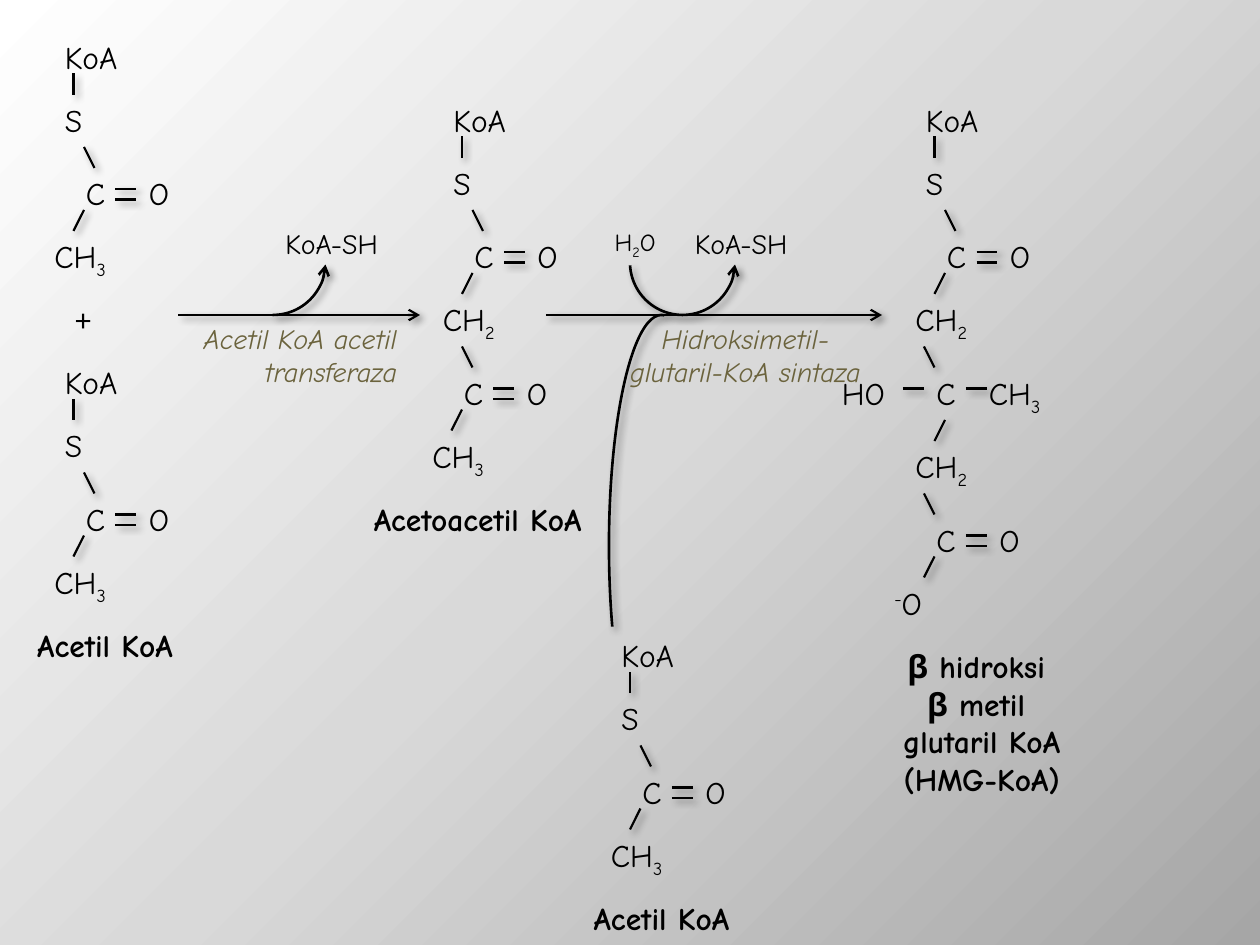
from pptx import Presentation
from pptx.dml.color import RGBColor
from pptx.enum.shapes import MSO_CONNECTOR as Connector, MSO_SHAPE as Shape
from pptx.enum.text import PP_ALIGN as Align
from pptx.oxml import parse_xml
from pptx.oxml.ns import nsdecls, qn
from pptx.util import Cm, Pt

BLACK = RGBColor(0x00, 0x00, 0x00)
OLIVE = RGBColor(0x6B, 0x63, 0x3D)
WHITE = RGBColor(0xFF, 0xFF, 0xFF)
SILVER = RGBColor(0xD9, 0xD9, 0xD9)
GRAY = RGBColor(0xA6, 0xA6, 0xA6)
BASELINES = {"_": "-25000", "^": "30000"}


def grid(steps):
    """Length of a number of grid steps, twelve to the inch."""
    return Cm(steps * 2.54 / 12)


def write(frame, text, font="Comic Neue", size=18, color=BLACK, bold=False,
          italic=False, align=Align.LEFT):
    """Fill a frame; "|" parts spans, "_" lowers a span and "^" raises it."""
    for index, line in enumerate(text.split("\n")):
        para = frame.add_paragraph() if index else frame.paragraphs[0]
        para.alignment = align
        for piece in line.split("|"):
            span = para.add_run()
            span.text = piece.lstrip("_^")
            span.font.name = font
            span.font.size = Pt(size)
            span.font.bold = bold
            span.font.italic = italic
            span.font.color.rgb = color
            if piece[0] in BASELINES:
                span.font._element.set("baseline", BASELINES[piece[0]])


class ReactionSlide:
    def __init__(self, page):
        self.page = page
        self.canvas = page.shapes

    def background(self, stops, angle):
        self.page.background.fill.solid()
        holder = self.page.element.find(".//" + qn("p:bgPr"))
        marks = "".join(
            f'<a:gs pos="{place * 1000}"><a:srgbClr val="{color}"/></a:gs>'
            for place, color in stops)
        holder.replace(holder[0], parse_xml(
            f'<a:gradFill {nsdecls("a")} rotWithShape="1"><a:gsLst>{marks}</a:gsLst>'
            f'<a:lin ang="{angle * 60000}" scaled="0"/></a:gradFill>'))

    def text(self, text, left, top, width=8, height=4.8, **style):
        box = self.canvas.add_textbox(*map(grid, (left, top, width, height)))
        box.text_frame.word_wrap = True
        write(box.text_frame, text, **style)

    def stroke(self, shape, width, arrow):
        """Black line with a soft shadow and, if named, an arrowhead."""
        shape.line.color.rgb = BLACK
        shape.line.width = Pt(width)
        if arrow:
            shape.line._get_or_add_ln().append(
                parse_xml(f'<a:{arrow} {nsdecls("a")} type="arrow"/>'))
        shape._element.spPr.append(parse_xml(
            f'<a:effectLst {nsdecls("a")}><a:outerShdw blurRad="{Pt(4)}" '
            f'dist="{Pt(3)}" dir="2700000" algn="tl" rotWithShape="0">'
            '<a:srgbClr val="000000"><a:alpha val="40000"/></a:srgbClr>'
            '</a:outerShdw></a:effectLst>'))

    def line(self, x1, y1, x2, y2, arrow=None):
        link = self.canvas.add_connector(
            Connector.STRAIGHT, *map(grid, (x1, y1, x2, y2)))
        self.stroke(link, 1.25, arrow)

    def arc(self, left, top, width, height, start, end, arrow=None):
        curve = self.canvas.add_shape(
            Shape.ARC, *map(grid, (left, top, width, height)))
        curve.adjustments[0], curve.adjustments[1] = start, end
        curve.fill.background()
        self.stroke(curve, 1.5, arrow)

    def carbonyl(self, x, y, bond=2):
        """C=O with a bond to the atom above and one to the atom below."""
        self.text("C", x, y, 4.2)
        self.text("O", x + 6, y, 4.8)
        for row in (2, 3):
            self.line(x + 4, y + row, x + 6, y + row)
        self.line(x + bond, y, x + bond - 1, y - 2)
        self.line(x, y + 6, x + 1, y + 4)

    def thioester(self, x, y, tail):
        """KoA-S-C=O chain in a new group, closed by the tail atom."""
        self.canvas = self.page.shapes.add_group_shape().shapes
        self.text("KoA", x, y)
        self.line(x + 2, y + 6, x + 2, y + 4)
        self.text("S", x, y + 6, 4.6)
        self.carbonyl(x + 2, y + 13)
        self.text(tail, x - 1, y + 19)

    def end_molecule(self):
        self.canvas = self.page.shapes


def draw_molecules(slide):
    for x, y in ((5, 3), (5, 34), (58, 60)):
        slide.thioester(x, y, "CH|_3")

    slide.thioester(42, 9, "CH|_2")
    slide.carbonyl(43, 35)
    slide.text("CH|_3", 40, 41)

    slide.thioester(87, 9, "CH|_2")
    slide.line(89, 35, 88, 33)
    slide.text("HO", 79, 35, 7.2)
    slide.line(86, 37, 88, 37)
    slide.text("C", 88, 35)
    slide.line(92, 37, 94, 37)
    slide.text("CH|_3", 93, 35)
    slide.line(89, 42, 90, 40)
    slide.text("CH|_2", 86, 42)
    slide.carbonyl(88, 49, bond=1)
    slide.text("^-|O", 84, 55)
    slide.end_molecule()


def draw_reactions(slide):
    slide.line(17, 30, 40, 30, arrow="tailEnd")
    slide.line(52, 30, 84, 30, arrow="tailEnd")
    slide.arc(21, 20, 10, 10, 1.345, 54.175, arrow="headEnd")
    slide.arc(60, 20, 10, 10, 1.345, 106.113, arrow="headEnd")
    slide.arc(58, 30, 10, 44, 72.828, 162.417)
    for left in (26, 65):
        slide.text("KoA-SH", left, 21, 12.5, 4.4, size=16)
    slide.text("H|_2|O", 55, 21, 11, 4, size=14, align=Align.CENTER)
    slide.text("+", 6, 28, 4, font="Calibri")
    enzyme = dict(size=16, color=OLIVE, italic=True)
    slide.text("Acetil KoA acetil transferaza", 14, 30, 25, 9,
               align=Align.RIGHT, **enzyme)
    slide.text("Hidroksimetil-glutaril-KoA sintaza", 58, 30, 26, 12,
               align=Align.CENTER, **enzyme)


def draw_names(slide):
    names = (
        ("Acetil KoA", 0, 59, 20, 5),
        ("Acetil KoA", 53, 85, 20, 5),
        ("Acetoacetil KoA", 32, 47, 27, 5),
        ("β hidroksi \nβ metil \nglutaril KoA\n(HMG-KoA)", 80, 61, 27, 14),
    )
    for name in names:
        slide.text(*name, bold=True, align=Align.CENTER)


def main():
    deck = Presentation()
    deck.slide_width, deck.slide_height = Cm(25.4), Cm(19.05)
    slide = ReactionSlide(deck.slides.add_slide(deck.slide_layouts[6]))
    slide.background(((0, WHITE), (50, SILVER), (100, GRAY)), angle=45)
    draw_molecules(slide)
    draw_reactions(slide)
    draw_names(slide)
    deck.save("out.pptx")


if __name__ == "__main__":
    main()
